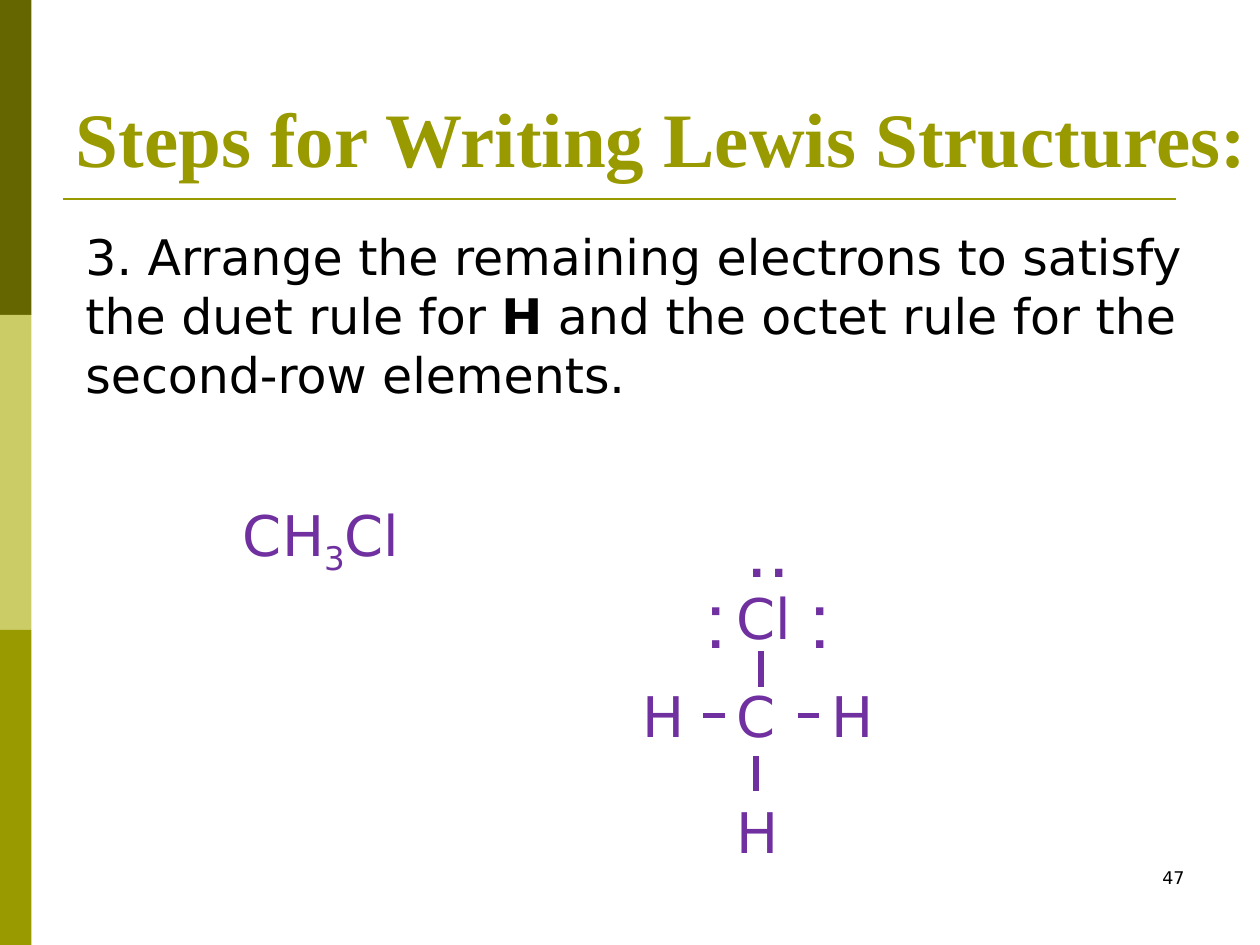
from lxml import etree
from pptx import Presentation
from pptx.dml.color import RGBColor
from pptx.enum.shapes import MSO_CONNECTOR, MSO_SHAPE
from pptx.enum.text import MSO_ANCHOR, MSO_AUTO_SIZE, PP_ALIGN
from pptx.oxml.ns import qn
from pptx.util import Inches, Pt

DARK_OLIVE = RGBColor(0x66, 0x66, 0x00)
PALE_OLIVE = RGBColor(0xCC, 0xCC, 0x66)
OLIVE = RGBColor(0x99, 0x99, 0x00)
PURPLE = RGBColor(0x70, 0x30, 0xA0)
BLACK = RGBColor(0x00, 0x00, 0x00)

STRAIGHT = MSO_CONNECTOR.STRAIGHT
RECTANGLE = MSO_SHAPE.RECTANGLE
LEFT, RIGHT = PP_ALIGN.LEFT, PP_ALIGN.RIGHT
BOTTOM = MSO_ANCHOR.BOTTOM
GROW = MSO_AUTO_SIZE.SHAPE_TO_FIT_TEXT
NO_FIT = MSO_AUTO_SIZE.NONE
LEFT_SIDE, RIGHT_SIDE = 1, 3

TITLE_FONT = "Times New Roman"
BODY_FONT = "DejaVu Sans"
DOT_FONT = "Arial"


class LewisSlide:
    """Holds the slide and draws its elements in one style."""

    def __init__(self, slide):
        self.slide = slide
        self.shapes = slide.shapes

    def style(self, span, size, color, font, bold=False):
        span.font.size = Pt(size)
        span.font.color.rgb = color
        span.font.name = font
        span.font.bold = bold

    def title(self, text, left, top, width, height):
        box = self.shapes.title
        box.left, box.top = Inches(left), Inches(top)
        box.width, box.height = Inches(width), Inches(height)
        frame = box.text_frame
        frame.text = text
        frame.word_wrap = True
        frame.auto_size = NO_FIT
        frame.vertical_anchor = BOTTOM
        para = frame.paragraphs[0]
        para.alignment = LEFT
        self.style(para.runs[0], 44, OLIVE, TITLE_FONT, True)

    def text(self, parts, left, top, width, height, size=32, color=PURPLE,
             font=BODY_FONT, align=LEFT, fit=GROW):
        box = self.shapes.add_textbox(Inches(left), Inches(top),
                                      Inches(width), Inches(height))
        frame = box.text_frame
        frame.word_wrap = True
        frame.auto_size = fit
        para = frame.paragraphs[0]
        para.alignment = align
        for part in parts:
            span = para.add_run()
            span.text = part
            self.style(span, size, color, font)
        return box

    def atom(self, symbol, left, top, width):
        return self.text([symbol], left, top, width, 0.64)

    def lone_pair(self, dots, left, top):
        return self.text([dots], left, top, 0.58, 0.84, size=44, font=DOT_FONT)

    def band(self, color, top):
        shape = self.shapes.add_shape(RECTANGLE, 0, Inches(top),
                                      Inches(0.25), Inches(2.5))
        shape.shadow.inherit = False
        shape.fill.solid()
        shape.fill.fore_color.rgb = color
        shape.line.fill.background()

    def line(self, x1, y1, x2, y2, color=PURPLE, weight=3):
        line = self.shapes.add_connector(STRAIGHT, Inches(x1), Inches(y1),
                                         Inches(x2), Inches(y2))
        line.line.color.rgb = color
        line.line.width = Pt(weight)
        etree.SubElement(line._element.spPr, qn("a:effectLst"))
        return line


def main():
    deck = Presentation()
    deck.slide_width, deck.slide_height = Inches(10), Inches(7.5)
    page = LewisSlide(deck.slides.add_slide(deck.slide_layouts[5]))

    # Side bands and title rule
    for index, color in enumerate((DARK_OLIVE, PALE_OLIVE, OLIVE)):
        page.band(color, 2.5 * index)
    page.line(0.5, 1.58, 9.33, 1.58, OLIVE, 1.5)

    # Slide number, title and instruction
    page.text(["47"], 7.17, 6.83, 2.33, 0.5, size=10, color=BLACK,
              align=RIGHT, fit=NO_FIT)
    page.title("Steps for Writing Lewis Structures:", 0.5, 0.25, 9.5, 1.25)
    step = page.text(
        ["3. Arrange the remaining electrons to satisfy the duet rule for ",
         "H", " and the octet rule for the second-row elements."],
        0.58, 1.75, 8.92, 1.51, size=28, color=BLACK)
    step.text_frame.paragraphs[0].runs[1].font.bold = True

    # Formula with its subscript
    formula = page.text(["CH", "3", "Cl"], 1.83, 3.92, 1.5, 0.64)
    subscript = formula.text_frame.paragraphs[0].runs[1]
    subscript.font._element.set("baseline", "-25000")

    # Atoms
    carbon = page.atom("C", 5.75, 5.36, 0.5)
    left_hydrogen = page.atom("H", 5, 5.36, 0.58)
    page.atom("H", 5.75, 6.28, 0.58)
    right_hydrogen = page.atom("H", 6.5, 5.36, 0.58)
    page.atom("Cl", 5.75, 4.58, 0.75)

    # Bonds
    left_bond = page.line(5.58, 5.68, 5.75, 5.68)
    left_bond.begin_connect(left_hydrogen, RIGHT_SIDE)
    left_bond.end_connect(carbon, LEFT_SIDE)
    right_bond = page.line(6.33, 5.68, 6.5, 5.68)
    right_bond.end_connect(right_hydrogen, LEFT_SIDE)
    page.line(6.04, 5.17, 6.04, 5.45)
    page.line(6, 6, 6, 6.28)

    # Lone pairs around the chlorine
    page.lone_pair("..", 5.83, 3.92)
    for left in (6.33, 5.5):
        page.lone_pair(":", left, 4.49)

    deck.save("out.pptx")


if __name__ == "__main__":
    main()
